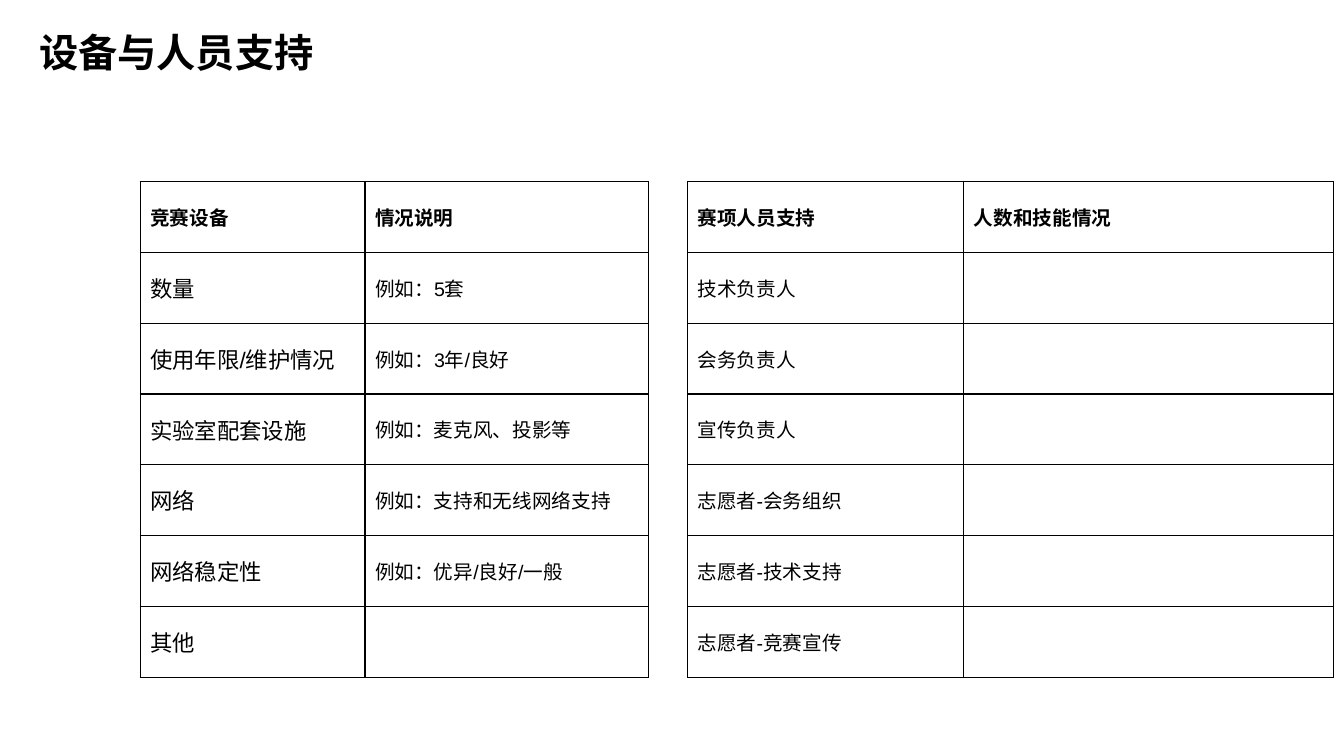
from lxml import etree
from pptx import Presentation
from pptx.dml.color import RGBColor
from pptx.enum.text import MSO_ANCHOR, MSO_AUTO_SIZE
from pptx.oxml.ns import qn
from pptx.util import Inches, Pt

MIDDLE = MSO_ANCHOR.MIDDLE
GROW = MSO_AUTO_SIZE.SHAPE_TO_FIT_TEXT
COLORS = {"text": "000000", "border": "000000"}
BODY_FONT = "Arial"
CJK_FONT = "Noto Sans CJK SC"
TABLE_TOP = 1.8
ROW_HEIGHT = 0.703

EQUIPMENT = [
    ("竞赛设备", "情况说明"),
    ("数量", "例如：5套"),
    ("使用年限/维护情况", "例如：3年/良好"),
    ("实验室配套设施", "例如：麦克风、投影等"),
    ("网络", "例如：支持和无线网络支持"),
    ("网络稳定性", "例如：优异/良好/一般"),
    ("其他", ""),
]
STAFF = [
    ("赛项人员支持", "人数和技能情况"),
    ("技术负责人", ""),
    ("会务负责人", ""),
    ("宣传负责人", ""),
    ("志愿者-会务组织", ""),
    ("志愿者-技术支持", ""),
    ("志愿者-竞赛宣传", ""),
]


def write_text(paragraph, text, size, bold, font_name):
    """Write one paragraph with a Latin and an East Asian font."""
    run = paragraph.add_run()
    run.text = text
    font = paragraph.font
    font.name, font.size, font.bold = font_name, Pt(size), bold
    font.color.rgb = RGBColor.from_string(COLORS["text"])
    run.font.name = font_name
    east_asian = etree.SubElement(run.font._element, qn("a:ea"))
    east_asian.set("typeface", CJK_FONT)


def set_borders(cell):
    """Draw a thin line on all four sides of a cell."""
    properties = cell._tc.get_or_add_tcPr()
    for side in ("lnL", "lnR", "lnT", "lnB"):
        line = etree.SubElement(properties, qn(f"a:{side}"), w=str(Pt(1)))
        fill = etree.SubElement(line, qn("a:solidFill"))
        etree.SubElement(fill, qn("a:srgbClr"), val=COLORS["border"])


def add_title(slide, text):
    """Add the slide heading."""
    shape = slide.shapes.add_textbox(Inches(0.34), Inches(0.23), Inches(9.45), Inches(0.74))
    frame = shape.text_frame
    frame.word_wrap = True
    frame.auto_size = GROW
    frame.margin_left = frame.margin_right = Inches(0.05)
    frame.margin_top = frame.margin_bottom = Inches(0.05)
    write_text(frame.paragraphs[0], text, 28, True, CJK_FONT)


def add_support_table(slide, left, widths, rows, label_size):
    """Add a bordered table with a bold header row."""
    shape = slide.shapes.add_table(
        len(rows), len(widths), Inches(left), Inches(TABLE_TOP),
        Inches(sum(widths)), Inches(ROW_HEIGHT * len(rows)))
    table = shape.table
    table.horz_banding = False
    for column, width in zip(table.columns, widths):
        column.width = Inches(width)
    for row_index, texts in enumerate(rows):
        table.rows[row_index].height = Inches(ROW_HEIGHT)
        for column_index, text in enumerate(texts):
            cell = table.cell(row_index, column_index)
            set_borders(cell)
            cell.fill.background()
            cell.vertical_anchor = MIDDLE
            if text:
                is_label = row_index > 0 and column_index == 0
                write_text(cell.text_frame.paragraphs[0], text,
                           label_size if is_label else 14, row_index == 0, BODY_FONT)


def main():
    """Build the slide and save it."""
    presentation = Presentation()
    presentation.slide_width = Inches(13.33)
    presentation.slide_height = Inches(7.5)
    slide = presentation.slides.add_slide(presentation.slide_layouts[6])
    add_support_table(slide, 1.39, (2.23, 2.81), EQUIPMENT, 16)
    add_support_table(slide, 6.82, (2.74, 3.67), STAFF, 14)
    add_title(slide, "设备与人员支持")
    presentation.save("out.pptx")


if __name__ == "__main__":
    main()
